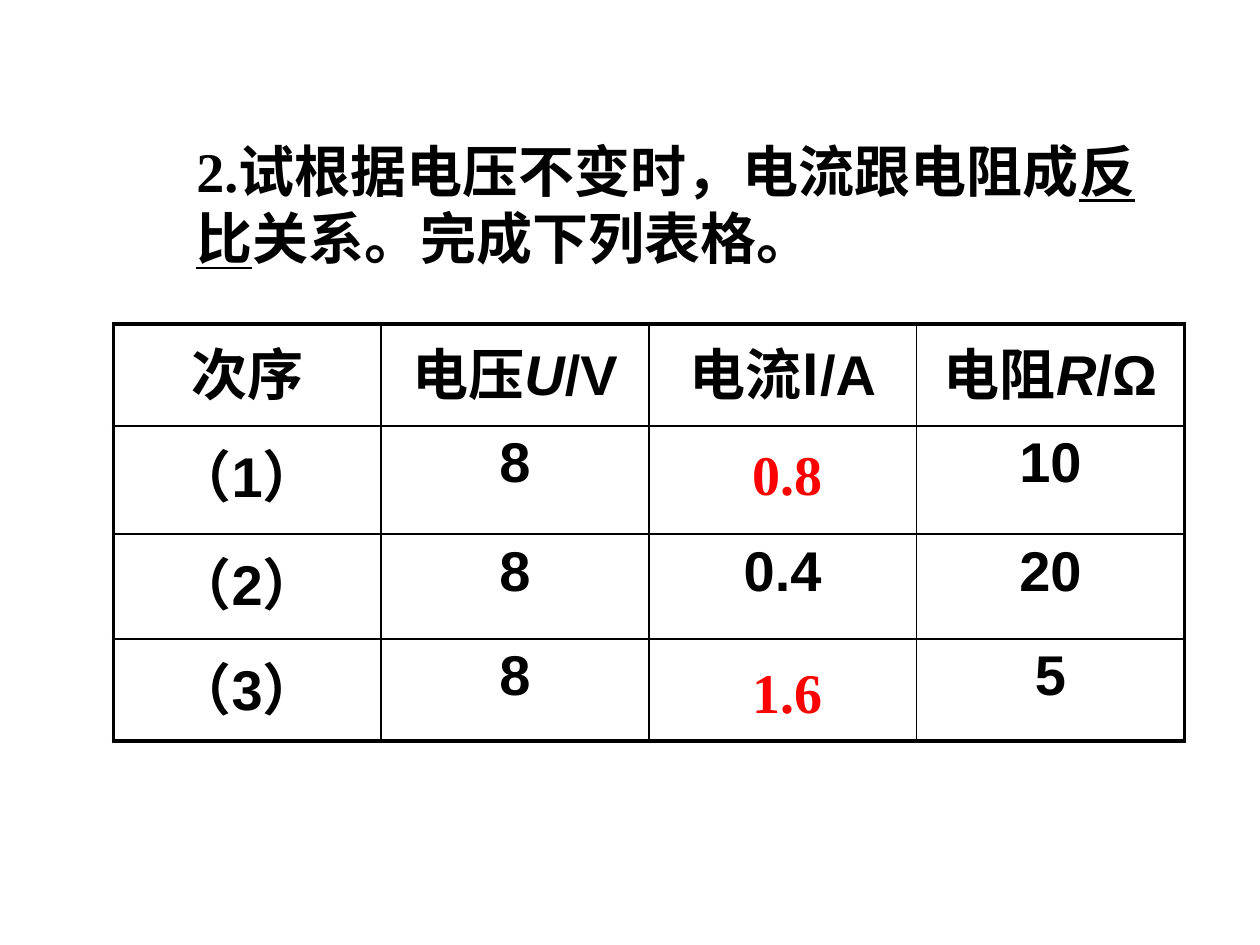
from lxml import etree
from pptx import Presentation
from pptx.dml.color import RGBColor
from pptx.enum.text import MSO_ANCHOR, PP_ALIGN
from pptx.oxml.ns import qn
from pptx.util import Inches, Pt

CENTER = PP_ALIGN.CENTER
LEFT = PP_ALIGN.LEFT
TOP = MSO_ANCHOR.TOP

COLORS = {"ink": "000000", "answer": "FF0000"}
SERIF, SANS, CHINESE = "Times New Roman", "Arial", "Noto Sans CJK SC"
TEXT_SIZE = 32
OUTER_BORDER, INNER_BORDER = 2.25, 1

QUESTION = [
    ("2.试根据电压不变时，电流跟电阻成", {}),
    ("反比", {"underline": True}),
    ("关系。完成下列表格。", {}),
]
ROWS = [
    [
        [("次序", {})],
        [("电压", {}), ("U", {"italic": True}), ("/V", {})],
        [("电流", {}), ("I", {"font": CHINESE}), ("/A", {})],
        [("电阻", {}), ("R", {"italic": True}), ("/Ω", {})],
    ],
    ["（1）", "8", "", "10"],
    ["（2）", "8", "0.4", "20"],
    ["（3）", "8", "", "5"],
]
ROW_HEIGHTS = [0.81, 0.86, 0.83, 0.81]
TABLE_LEFT, TABLE_TOP, TABLE_WIDTH = 0.9, 2.57, 8.5
ANSWERS = [("0.8", 3.44), ("1.6", 5.17)]
ANSWER_LEFT, ANSWER_WIDTH, ANSWER_HEIGHT = 5.87, 0.79, 0.63


def write_text(text_frame, content, font=SANS, color="ink", align=LEFT, line_spacing=None):
    paragraph = text_frame.paragraphs[0]
    paragraph.alignment = align
    if line_spacing:
        paragraph.line_spacing = Pt(line_spacing)
    runs = [(content, {})] if isinstance(content, str) else content
    for text, style in runs:
        run = paragraph.add_run()
        run.text = text
        run.font.size = Pt(TEXT_SIZE)
        run.font.bold = True
        run.font.italic = style.get("italic")
        run.font.underline = style.get("underline")
        run.font.color.rgb = RGBColor.from_string(COLORS[color])
        run.font.name = style.get("font", font)
        properties = run.font._element
        properties.set("lang", "zh-CN")
        etree.SubElement(properties, qn("a:ea")).set("typeface", CHINESE)


def add_text_box(slide, left, top, width, height, content, wrap=True, margin_top=0.05, **style):
    shape = slide.shapes.add_textbox(*map(Inches, (left, top, width, height)))
    shape.text_frame.word_wrap = wrap
    shape.text_frame.margin_top = Inches(margin_top)
    write_text(shape.text_frame, content, **style)


def set_borders(cell, widths):
    properties = cell._tc.get_or_add_tcPr()
    for position, (side, width) in enumerate(widths.items()):
        line = etree.Element(qn(f"a:ln{side}"), w=str(Pt(width)))
        fill = etree.SubElement(line, qn("a:solidFill"))
        etree.SubElement(fill, qn("a:srgbClr")).set("val", COLORS["ink"])
        properties.insert(position, line)


def add_results_table(slide):
    row_count, column_count = len(ROWS), len(ROWS[0])
    frame = slide.shapes.add_table(
        row_count, column_count,
        *map(Inches, (TABLE_LEFT, TABLE_TOP, TABLE_WIDTH, sum(ROW_HEIGHTS))),
    )
    table = frame.table
    table.first_row = table.horz_banding = False
    for column in table.columns:
        column.width = Inches(TABLE_WIDTH / column_count)
    for row_index, contents in enumerate(ROWS):
        table.rows[row_index].height = Inches(ROW_HEIGHTS[row_index])
        for column_index, content in enumerate(contents):
            cell = table.cell(row_index, column_index)
            cell.fill.background()
            cell.vertical_anchor = TOP
            edges = {
                "L": column_index == 0,
                "R": column_index == column_count - 1,
                "T": row_index == 0,
                "B": row_index == row_count - 1,
            }
            set_borders(cell, {
                side: OUTER_BORDER if outer else INNER_BORDER
                for side, outer in edges.items()
            })
            if content:
                write_text(cell.text_frame, content, align=CENTER)


def main():
    presentation = Presentation()
    presentation.slide_width, presentation.slide_height = Inches(10), Inches(7.5)
    slide = presentation.slides.add_slide(presentation.slide_layouts[6])
    add_text_box(slide, 1.46, 0.99, 8, 1.17, QUESTION,
                 font=SERIF, line_spacing=38.5, margin_top=0.09)
    add_results_table(slide)
    for answer, top in ANSWERS:
        add_text_box(slide, ANSWER_LEFT, top, ANSWER_WIDTH, ANSWER_HEIGHT, answer,
                     wrap=False, font=SERIF, color="answer")
    presentation.save("out.pptx")


if __name__ == "__main__":
    main()
